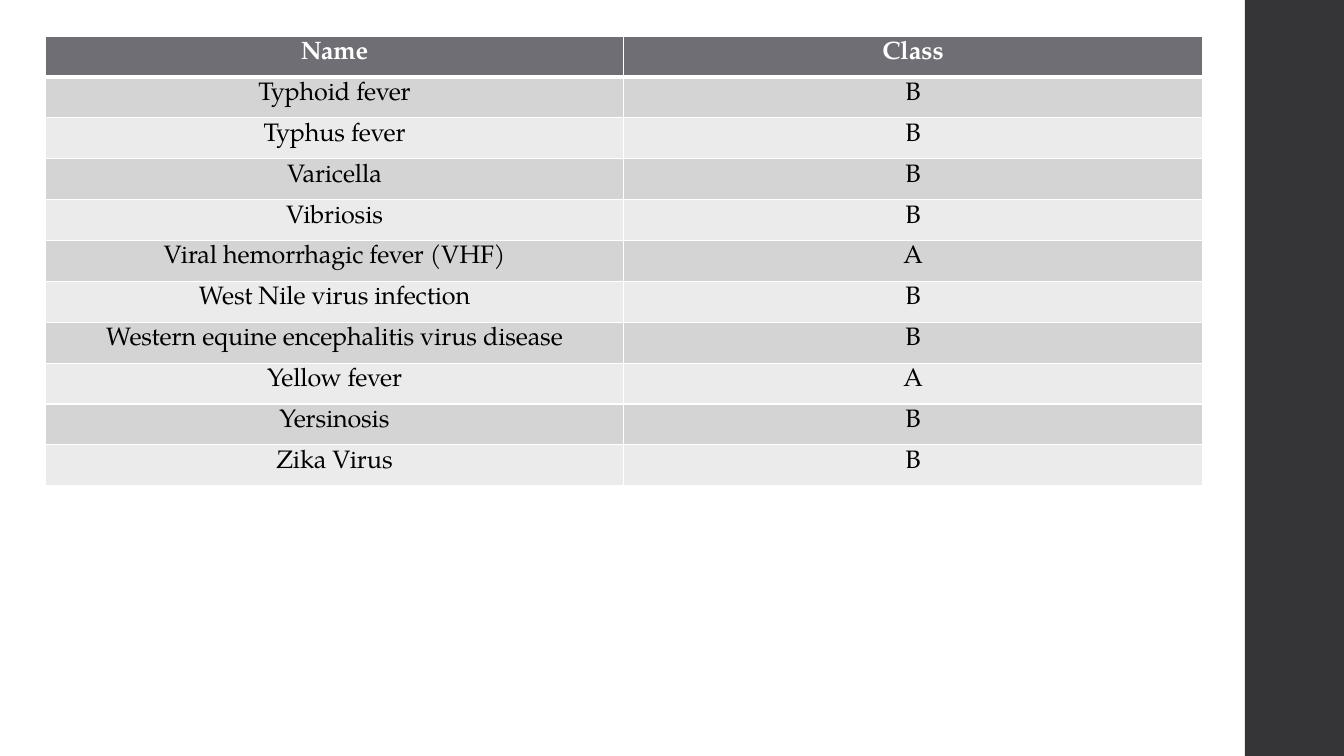
import pptx
import pptx.util
import pptx.dml.color
import pptx.enum.shapes
import pptx.enum.text
import pptx.oxml
import pptx.oxml.ns
from pptx.util import Cm, Pt

HEAD = ("Name", "Class")
ROWS = [
    ("Typhoid fever", "B"),
    ("Typhus fever", "B"),
    ("Varicella", "B"),
    ("Vibriosis", "B"),
    ("Viral hemorrhagic fever (VHF)", "A"),
    ("West Nile virus infection", "B"),
    ("Western equine encephalitis virus disease", "B"),
    ("Yellow fever", "A"),
    ("Yersinosis", "B"),
    ("Zika Virus", "B"),
]
FONT = "TeX Gyre Pagella"
WHITE, BLACK, DARK, GREY = "FFFFFF", "000000", "353537", "6E6E74"
BANDS = ("D4D4D5", "EBEBEB")
WIDE, HIGH = 33.87, 19.05
BAR = 2.5
LEFT, TOP = 1.14, 0.91
COL, ROW = 14.58, 1.03


def paint(fill, color):
    fill.solid()
    fill.fore_color.rgb = pptx.dml.color.RGBColor.from_string(color)


def edge(cell, side, width):
    """Draw one white border; side is L, R, T or B, in that schema order."""
    props = cell._tc.get_or_add_tcPr()
    line = pptx.oxml.parse_xml(
        f'<a:ln{side} {pptx.oxml.ns.nsdecls("a")} w="{Pt(width)}">'
        f'<a:solidFill><a:srgbClr val="{WHITE}"/></a:solidFill></a:ln{side}>')
    props.insert("LRTB".index(side), line)


def write(cell, text, bold, color, tight):
    cell.margin_left = cell.margin_right = cell.margin_bottom = 0
    cell.margin_top = Cm(0.13)
    para = cell.text_frame.paragraphs[0]
    para.text = text
    para.alignment = pptx.enum.text.PP_ALIGN.CENTER
    para.space_before = Pt(3.4)
    run = para.runs[0]
    run.font.name, run.font.size, run.font.bold = FONT, Pt(18), bold
    paint(run.font.fill, color)
    if tight:
        run.font._element.set("spc", "-10")


def main():
    deck = pptx.Presentation()
    deck.slide_width, deck.slide_height = Cm(WIDE), Cm(HIGH)
    slide = deck.slides.add_slide(deck.slide_layouts[6])

    bar = slide.shapes.add_shape(
        pptx.enum.shapes.MSO_SHAPE.RECTANGLE,
        Cm(WIDE - BAR), 0, Cm(BAR), Cm(HIGH))
    bar.shadow.inherit = False
    paint(bar.fill, DARK)
    bar.line.fill.background()

    lines = [HEAD] + ROWS
    table = slide.shapes.add_table(
        len(lines), len(HEAD), Cm(LEFT), Cm(TOP),
        Cm(COL * len(HEAD)), Cm(ROW * len(lines))).table
    for col in table.columns:
        col.width = Cm(COL)
    for r, line in enumerate(lines):
        table.rows[r].height = Cm(ROW)
        for c, text in enumerate(line):
            cell = table.cell(r, c)
            top = r == 0
            write(cell, text, top, WHITE if top else BLACK, c == 0)
            paint(cell.fill, GREY if top else BANDS[(r - 1) % 2])
            for side in "LRTB":
                thick = (r, side) in ((0, "B"), (1, "T"))
                edge(cell, side, 3 if thick else 1)

    deck.save("out.pptx")


if __name__ == "__main__":
    main()
